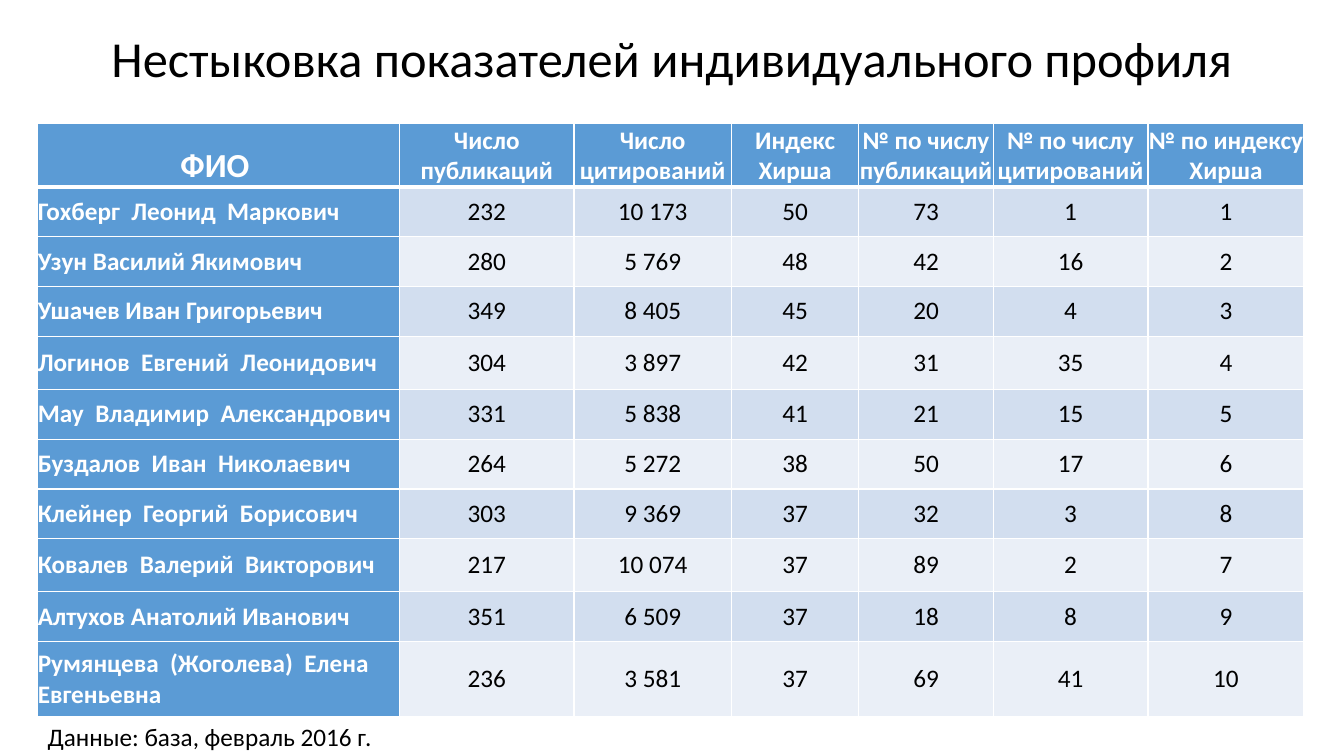
from lxml import etree
from pptx import Presentation
from pptx.dml.color import RGBColor
from pptx.enum.text import MSO_ANCHOR, PP_ALIGN
from pptx.oxml.ns import qn
from pptx.util import Pt

LEFT, CENTER = PP_ALIGN.LEFT, PP_ALIGN.CENTER
MIDDLE, BOTTOM = MSO_ANCHOR.MIDDLE, MSO_ANCHOR.BOTTOM
BLACK = RGBColor(0, 0, 0)
WHITE = RGBColor(255, 255, 255)
BLUE = RGBColor(0x5B, 0x9B, 0xD5)
DARK = RGBColor(0xD2, 0xDE, 0xEF)
LIGHT = RGBColor(0xEA, 0xEF, 0xF7)

HEADS = ["ФИО ", "Число публикаций", "Число цитирований", "Индекс Хирша",
         "№ по числу публикаций", "№ по числу цитирований", "№ по индексу Хирша"]
ROWS = [
    ["Гохберг  Леонид  Маркович", "232", "10 173", "50", "73", "1", "1"],
    ["Узун Василий Якимович", "280", "5 769", "48", "42", "16", "2"],
    ["Ушачев Иван Григорьевич", "349", "8 405", "45", "20", "4", "3"],
    ["Логинов  Евгений  Леонидович", "304", "3 897", "42", "31", "35", "4"],
    ["Мау  Владимир  Александрович", "331", "5 838", "41", "21", "15", "5"],
    ["Буздалов  Иван  Николаевич", "264", "5 272", "38", "50", "17", "6"],
    ["Клейнер  Георгий  Борисович", "303", "9 369", "37", "32", "3", "8"],
    ["Ковалев  Валерий  Викторович", "217", "10 074", "37", "89", "2", "7"],
    ["Алтухов Анатолий Иванович", "351", "6 509", "37", "18", "8", "9"],
    ["Румянцева  (Жоголева)  Елена\nЕвгеньевна", "236", "3 581", "37", "69", "41", "10"],
]
WIDTHS = [258.5, 124.5, 112.5, 91, 96, 110.5, 111.5]
HEIGHTS = [45.4, 35.6, 35.6, 35.6, 38, 35.6, 35.6, 35.6, 38, 35.6, 53.4]


def write(frame, text, size=18, color=BLACK, bold=False, align=LEFT, space=1.0):
    frame.text = text
    for para in frame.paragraphs:
        para.alignment = align
        para.line_spacing = space
        for run in para.runs:
            font = run.font
            font.name, font.size, font.bold = "Calibri", Pt(size), bold
            font.color.rgb = color


def edge(cell, side, width):
    line = etree.SubElement(cell._tc.get_or_add_tcPr(), qn("a:ln" + side), w=str(Pt(width)))
    fill = etree.SubElement(line, qn("a:solidFill"))
    etree.SubElement(fill, qn("a:srgbClr"), val=str(WHITE))


deck = Presentation()
deck.slide_width, deck.slide_height = Pt(960), Pt(540)
slide = deck.slides.add_slide(deck.slide_layouts[5])

title = slide.shapes.title
title.left, title.top, title.width, title.height = Pt(66), Pt(0), Pt(828), Pt(88)
title.text_frame.vertical_anchor = MIDDLE
write(title.text_frame, "Нестыковка показателей индивидуального профиля",
      size=36, align=CENTER, space=0.9)

table = slide.shapes.add_table(len(HEIGHTS), len(WIDTHS), Pt(27), Pt(88),
                               Pt(sum(WIDTHS)), Pt(sum(HEIGHTS))).table
for col, width in zip(table.columns, WIDTHS):
    col.width = Pt(width)
for row, height in zip(table.rows, HEIGHTS):
    row.height = Pt(height)

for r, texts in enumerate([HEADS] + ROWS):
    for c, text in enumerate(texts):
        cell = table.cell(r, c)
        head = r == 0
        label = head or c == 0
        cell.margin_left = cell.margin_right = cell.margin_top = cell.margin_bottom = 0
        cell.vertical_anchor = BOTTOM if head else MIDDLE
        for side in "LRTB":
            thick = (r, side) in [(0, "B"), (1, "T")]
            edge(cell, side, 3 if thick else 1)
        cell.fill.solid()
        cell.fill.fore_color.rgb = BLUE if label else DARK if r % 2 else LIGHT
        write(cell.text_frame, text, size=24 if head and c == 0 else 18,
              color=WHITE if label else BLACK, bold=label,
              align=CENTER if head or c else LEFT)

note = slide.shapes.add_textbox(Pt(27), Pt(512), Pt(482), Pt(29))
note.text_frame.word_wrap = True
write(note.text_frame, "Данные: база, февраль 2016 г.")

deck.save("out.pptx")
